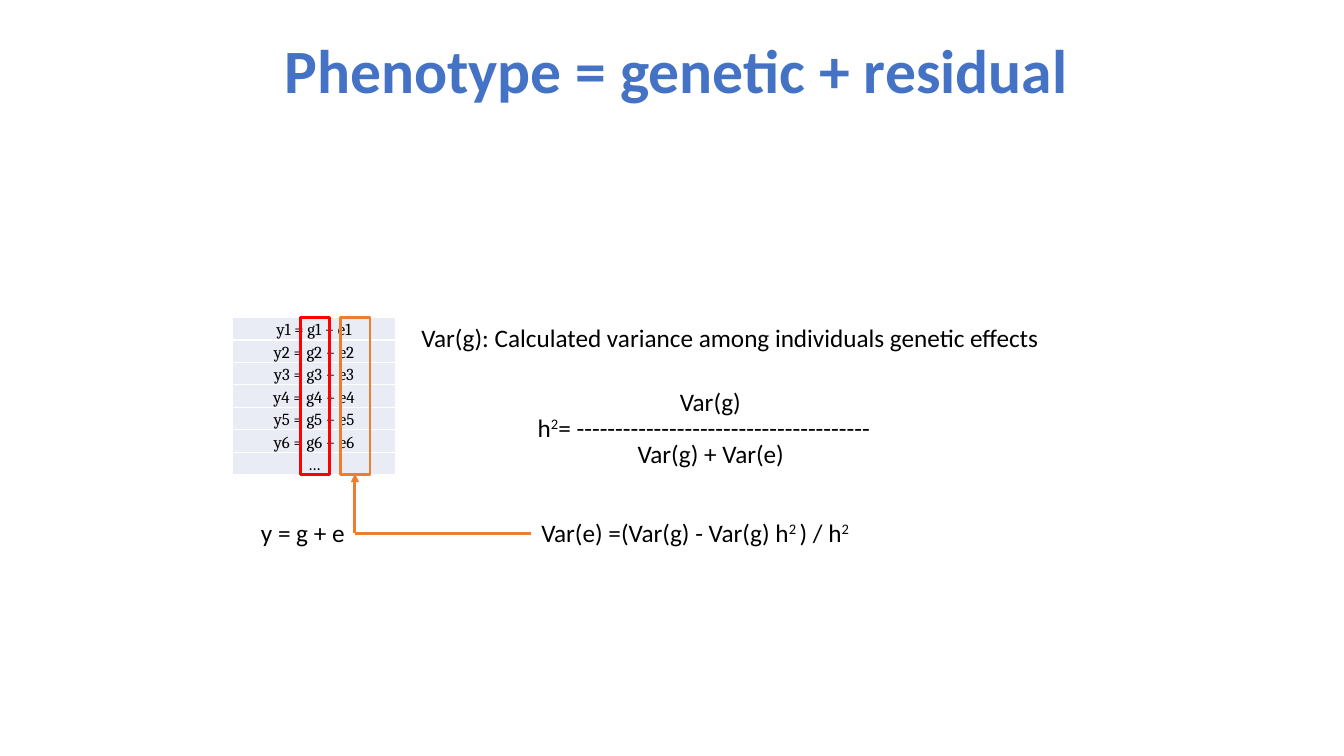
"""Builds the slide on splitting a phenotype into genetic and residual effects."""
from lxml import etree
from pptx import Presentation, util as u
from pptx.dml.color import RGBColor
from pptx.enum import shapes, text
from pptx.oxml.ns import qn

PX = 9144
BLACK, BLUE, RED, ORANGE = "000000", "4472C4", "FF0000", "ED7D31"
WHITE, ROW_FILL = "FFFFFF", "E9EBF5"
LEFT, CENTER = text.PP_ALIGN.LEFT, text.PP_ALIGN.CENTER

TITLE = ("Phenotype = genetic + residual", (96, 0, 1150, 145))
FORMULAS = [
    ("y = g + e", (249, 508, 127, 40), LEFT, True),
    ("Var(g): Calculated variance among individuals genetic effects", (408, 315, 739, 40), LEFT, True),
    ("Var(g)", (632, 378, 145, 40), CENTER, True),
    ("Var(g) + Var(e)", (572, 430, 266, 40), CENTER, True),
    ("h^2^= " + "-" * 38, (502, 404, 392, 40), CENTER, True),
    ("Var(e) =(Var(g) - Var(g) h^2 ^) / h^2", (527, 508, 342, 40), LEFT, False),
]
EQUATIONS = [f"y{n} = g{n} + e{n}" for n in range(1, 7)] + ["…"]
TABLE = (231, 315, 161, 156)
FRAMES = [(298, RED), (338, ORANGE)]
FRAME_WIDTH = 29
ARROWS = [((352, 529), (352, 470), True), ((527, 529), (352, 529), False)]


def px(*lengths):
    return [round(length * PX) for length in lengths]


def color(hex_code):
    return RGBColor.from_string(hex_code)


def style(span, size, font, hex_code, bold=False):
    span.font.size = u.Pt(size)
    span.font.name = font
    span.font.bold = bold
    span.font.color.rgb = color(hex_code)


def outline(line, hex_code):
    line.color.rgb = color(hex_code)
    line.width = u.Pt(2)


def add_text(page, content, place, align, size=18, hex_code=BLACK, bold=False, wrap=True):
    box = page.shapes.add_textbox(*px(*place))
    box.text_frame.word_wrap = wrap
    para = box.text_frame.paragraphs[0]
    para.alignment = align
    for order, piece in enumerate(content.split("^")):
        span = para.add_run()
        span.text = piece
        style(span, size, "Calibri", hex_code, bold)
        if order % 2:
            span.font._element.set("baseline", "30000")
    return box


def add_borders(cell, hex_code):
    properties = cell._tc.get_or_add_tcPr()
    for side in ("lnL", "lnR", "lnT", "lnB"):
        border = etree.SubElement(properties, qn(f"a:{side}"), w="12700")
        fill = etree.SubElement(border, qn("a:solidFill"))
        etree.SubElement(fill, qn("a:srgbClr"), val=hex_code)


def add_equations(page):
    table = page.shapes.add_table(len(EQUATIONS), 1, *px(*TABLE)).table
    table.first_row = table.horz_banding = False
    for row, equation in enumerate(EQUATIONS):
        table.rows[row].height = px(TABLE[3] / len(EQUATIONS))[0]
        cell = table.cell(row, 0)
        cell.margin_left, cell.margin_right, cell.margin_top, cell.margin_bottom = px(1, 1, 1, 0)
        cell.vertical_anchor = text.MSO_ANCHOR.BOTTOM
        add_borders(cell, WHITE)
        cell.fill.solid()
        cell.fill.fore_color.rgb = color(ROW_FILL)
        para = cell.text_frame.paragraphs[0]
        para.text = equation
        para.alignment = CENTER
        style(para.runs[0], 12, "Cambria", BLACK)


def add_frame(page, left, hex_code):
    place = px(left, TABLE[1], FRAME_WIDTH, TABLE[3])
    frame = page.shapes.add_shape(shapes.MSO_SHAPE.RECTANGLE, *place)
    frame.shadow.inherit = False
    frame.fill.background()
    outline(frame.line, hex_code)


def add_arrow(page, start, end, pointed):
    arrow = page.shapes.add_connector(shapes.MSO_CONNECTOR.STRAIGHT, *px(*start, *end))
    outline(arrow.line, ORANGE)
    if pointed:
        etree.SubElement(arrow.line._get_or_add_ln(), qn("a:tailEnd"), type="triangle")
    etree.SubElement(arrow._element.spPr, qn("a:effectLst"))


def main():
    deck = Presentation()
    deck.slide_width, deck.slide_height = px(1333, 750)
    page = deck.slides.add_slide(deck.slide_layouts[6])
    title = add_text(page, *TITLE, CENTER, 44, BLUE, True)
    title.text_frame.vertical_anchor = text.MSO_ANCHOR.MIDDLE
    title.text_frame.paragraphs[0].line_spacing = 0.9
    add_equations(page)
    for content, place, align, wrap in FORMULAS:
        add_text(page, content, place, align, wrap=wrap)
    for left, hex_code in FRAMES:
        add_frame(page, left, hex_code)
    for start, end, pointed in ARROWS:
        add_arrow(page, start, end, pointed)
    deck.save("out.pptx")


if __name__ == "__main__":
    main()
